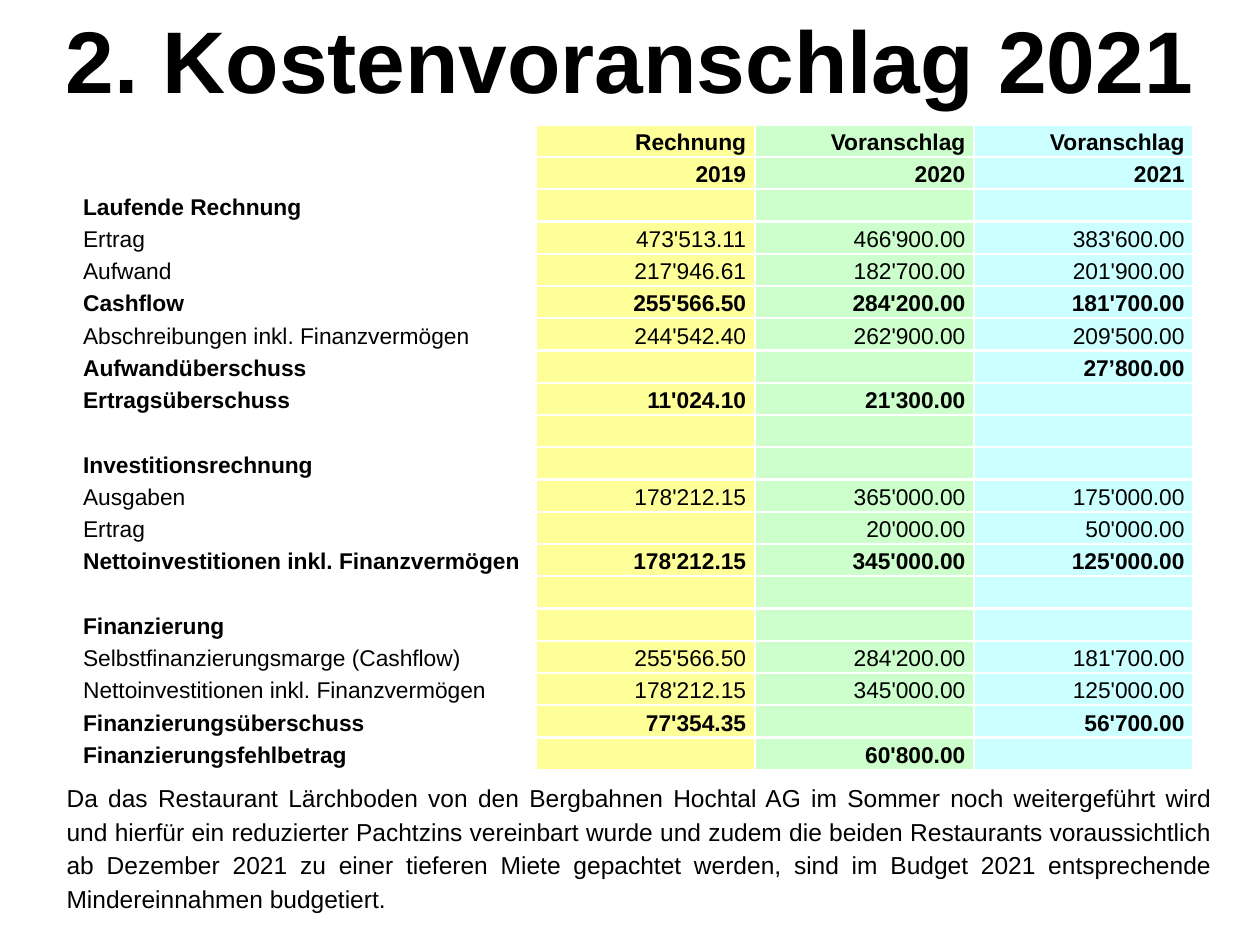
from lxml import etree
from pptx import Presentation
from pptx.dml.color import RGBColor
from pptx.enum.text import MSO_ANCHOR, PP_ALIGN
from pptx.oxml.ns import qn
from pptx.util import Inches, Pt

LEFT, RIGHT = PP_ALIGN.LEFT, PP_ALIGN.RIGHT
CENTER, JUSTIFY = PP_ALIGN.CENTER, PP_ALIGN.JUSTIFY
MIDDLE = MSO_ANCHOR.MIDDLE

BLACK = RGBColor(0x00, 0x00, 0x00)
WHITE = RGBColor(0xFF, 0xFF, 0xFF)
YELLOW = RGBColor(0xFF, 0xFF, 0x99)
GREEN = RGBColor(0xCC, 0xFF, 0xCC)
CYAN = RGBColor(0xCC, 0xFF, 0xFF)

FONT = "Arial"
TABLE_SIZE = 13
COLUMN_FILLS = (None, YELLOW, GREEN, CYAN)
COLUMN_WIDTHS = (3.66, 1.74, 1.74, 1.74)
TABLE_HEIGHT = 5.12

# Label, accounts 2019, budget 2020, budget 2021
BUDGET = [
    ("", "Rechnung", "Voranschlag", "Voranschlag"),
    ("", "2019", "2020", "2021"),
    ("Laufende Rechnung", "", "", ""),
    ("Ertrag", "473'513.11", "466'900.00", "383'600.00"),
    ("Aufwand", "217'946.61", "182'700.00", "201'900.00"),
    ("Cashflow", "255'566.50", "284'200.00", "181'700.00"),
    ("Abschreibungen inkl. Finanzvermögen", "244'542.40", "262'900.00", "209'500.00"),
    ("Aufwandüberschuss", "", "", "27’800.00"),
    ("Ertragsüberschuss", "11'024.10", "21'300.00", ""),
    ("", "", "", ""),
    ("Investitionsrechnung", "", "", ""),
    ("Ausgaben", "178'212.15", "365'000.00", "175'000.00"),
    ("Ertrag", "", "20'000.00", "50'000.00"),
    ("Nettoinvestitionen inkl. Finanzvermögen", "178'212.15", "345'000.00", "125'000.00"),
    ("", "", "", ""),
    ("Finanzierung", "", "", ""),
    ("Selbstfinanzierungsmarge (Cashflow)", "255'566.50", "284'200.00", "181'700.00"),
    ("Nettoinvestitionen inkl. Finanzvermögen", "178'212.15", "345'000.00", "125'000.00"),
    ("Finanzierungsüberschuss", "77'354.35", "", "56'700.00"),
    ("Finanzierungsfehlbetrag", "", "60'800.00", ""),
]
PLAIN_ROWS = {3, 4, 6, 11, 12, 16, 17}

EXPLANATION = (
    "Da das Restaurant Lärchboden von den Bergbahnen Hochtal AG im Sommer noch "
    "weitergeführt wird und hierfür ein reduzierter Pachtzins vereinbart wurde und "
    "zudem die beiden Restaurants voraussichtlich ab Dezember 2021 zu einer tieferen "
    "Miete gepachtet werden, sind im Budget 2021 entsprechende Mindereinnahmen "
    "budgetiert."
)


def write_text(frame, text, size, bold=False, align=LEFT, line_spacing=None, space_after=0):
    paragraph = frame.paragraphs[0]
    paragraph.alignment = align
    paragraph.space_after = Pt(space_after)
    if line_spacing:
        paragraph.line_spacing = line_spacing
    if not text:
        # An empty cell keeps the row low through its end-mark size
        end_mark = etree.SubElement(paragraph._p, qn("a:endParaRPr"))
        end_mark.set("sz", str(size * 100))
        return
    run = paragraph.add_run()
    run.text = text
    run.font.name = FONT
    run.font.size = Pt(size)
    run.font.bold = bold
    run.font.color.rgb = BLACK


def add_text_box(slide, left, top, width, height, text, **text_format):
    box = slide.shapes.add_textbox(Inches(left), Inches(top), Inches(width), Inches(height))
    box.text_frame.word_wrap = True
    write_text(box.text_frame, text, **text_format)


def set_cell_borders(cell, color, width):
    properties = cell._tc.get_or_add_tcPr()
    for position, side in enumerate(("a:lnL", "a:lnR", "a:lnT", "a:lnB")):
        line = etree.Element(qn(side), w=str(Pt(width)))
        line_fill = etree.SubElement(line, qn("a:solidFill"))
        etree.SubElement(line_fill, qn("a:srgbClr"), val=str(color))
        properties.insert(position, line)


def format_cell(cell, fill):
    cell.margin_left = cell.margin_right = Inches(0.07)
    cell.margin_top = cell.margin_bottom = 0
    cell.vertical_anchor = MIDDLE
    if fill is None:
        cell.fill.background()
    else:
        cell.fill.solid()
        cell.fill.fore_color.rgb = fill
    set_cell_borders(cell, WHITE, 1.5)


def add_budget_table(slide, left, top):
    frame = slide.shapes.add_table(
        len(BUDGET), len(COLUMN_WIDTHS), Inches(left), Inches(top),
        Inches(sum(COLUMN_WIDTHS)), Inches(TABLE_HEIGHT))
    table = frame.table
    table.first_row = False
    table.horz_banding = False
    for column, width in zip(table.columns, COLUMN_WIDTHS):
        column.width = Inches(width)
    for row_index, entries in enumerate(BUDGET):
        table.rows[row_index].height = Inches(TABLE_HEIGHT / len(BUDGET))
        for column_index, entry in enumerate(entries):
            cell = table.cell(row_index, column_index)
            format_cell(cell, COLUMN_FILLS[column_index])
            write_text(cell.text_frame, entry, size=TABLE_SIZE,
                       bold=row_index not in PLAIN_ROWS,
                       align=RIGHT if column_index else LEFT,
                       line_spacing=1.15, space_after=10)


def main():
    presentation = Presentation()
    presentation.slide_width = Inches(10)
    presentation.slide_height = Inches(7.5)
    slide = presentation.slides.add_slide(presentation.slide_layouts[6])

    # Title
    add_text_box(slide, 0, 0, 10, 0.94, "2. Kostenvoranschlag 2021",
                 size=50, bold=True, align=CENTER)

    # Budget comparison
    add_budget_table(slide, 0.59, 0.99)

    # Explanation below the table
    add_text_box(slide, 0.43, 6.13, 9.29, 1.17, EXPLANATION,
                 size=14, align=JUSTIFY, line_spacing=1.15, space_after=10)

    presentation.save("out.pptx")


if __name__ == "__main__":
    main()
